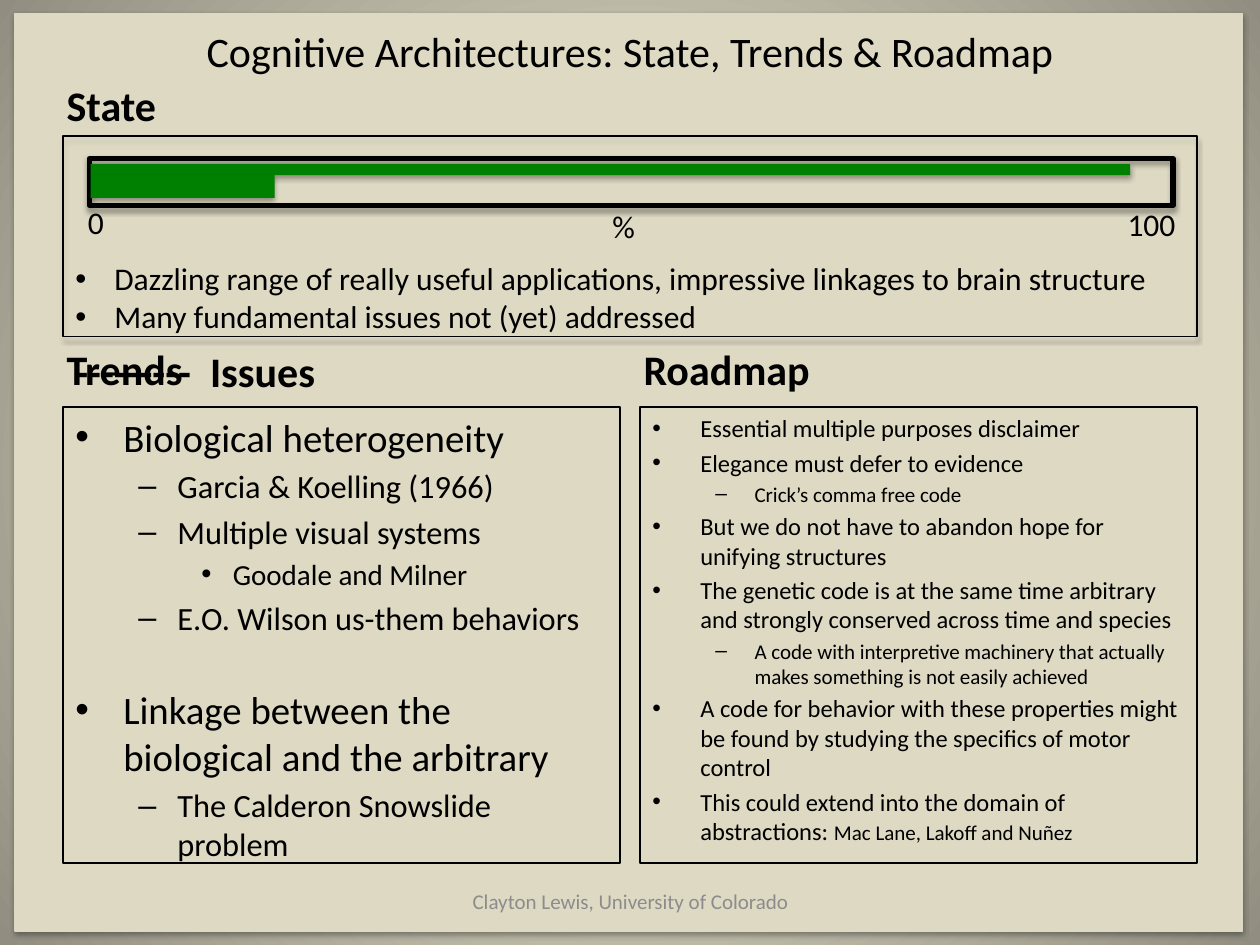
import lxml.etree
import pptx
import pptx.dml.color
import pptx.enum.dml
import pptx.enum.shapes
import pptx.enum.text
import pptx.oxml
import pptx.oxml.ns
import pptx.util

Inches = pptx.util.Inches
Pt = pptx.util.Pt
ALIGN = pptx.enum.text.PP_ALIGN
ANCHOR = pptx.enum.text.MSO_ANCHOR
BLACK, GREEN, SAND, GREY = "000000", "008000", "DDD9C3", "8C8C8C"
HEADING = {"size": Pt(24), "bold": True}
INDENTS = [(0.38, 0.38, "•"), (0.81, 0.31, "–"), (1.25, 0.25, "•")]
ISSUE_SIZES = [22.2, 18.5, 16.6]
ROADMAP_SIZES = [14, 12]
GROUP_GAP = 28

ISSUES = [
    (0, "Biological heterogeneity"),
    (1, "Garcia & Koelling (1966)"),
    (1, "Multiple visual systems"),
    (2, "Goodale and Milner"),
    (1, "E.O. Wilson us-them behaviors"),
    (0, "Linkage between the biological and the arbitrary"),
    (1, "The Calderon Snowslide problem"),
]
ROADMAP = [
    (0, "Essential multiple purposes disclaimer"),
    (0, "Elegance must defer to evidence"),
    (1, "Crick’s comma free code"),
    (0, "But we do not have to abandon hope for unifying structures"),
    (0, "The genetic code is at the same time arbitrary and strongly conserved across time and species"),
    (1, "A code with interpretive machinery that actually makes something is not easily achieved"),
    (0, "A code for behavior with these properties might be found by studying the specifics of motor control"),
    (0, "This could extend into the domain of abstractions: "),
]
STATE = [
    "Dazzling range of really useful applications, impressive linkages to brain structure",
    "Many fundamental issues not (yet) addressed",
]


def rgb(value):
    """Turn a hex string into a colour."""
    return pptx.dml.color.RGBColor.from_string(value)


def place(shape, left, top, width, height):
    """Move and size a shape in inches."""
    values = {"left": left, "top": top, "width": width, "height": height}
    for name, value in values.items():
        setattr(shape, name, Inches(value))


def style(span, color=BLACK, **values):
    """Format a run."""
    for name, value in {"name": "Calibri", "size": Pt(18), **values}.items():
        setattr(span.font, name, value)
    span.font.color.rgb = rgb(color)


def add_span(para, text, **values):
    """Add a formatted run to a paragraph."""
    span = para.add_run()
    span.text = text
    style(span, **values)


def add_box(page, left, top, width, height):
    """Add a wrapping text box."""
    box = page.shapes.add_textbox(*map(Inches, (left, top, width, height)))
    box.text_frame.word_wrap = True
    return box


def add_label(page, box, text, align=ALIGN.LEFT, **values):
    """Add one line of text in a box."""
    label = add_box(page, *box)
    para = label.text_frame.paragraphs[0]
    para.alignment = align
    add_span(para, text, **values)
    return label


def add_bar(page, box, fill=None, line=None, weight=0.75):
    """Add a shadowed rectangle."""
    bar = page.shapes.add_shape(pptx.enum.shapes.MSO_SHAPE.RECTANGLE, *map(Inches, box))
    for part, color in ((bar.fill, fill), (bar.line.fill, line)):
        if color:
            part.solid()
            part.fore_color.rgb = rgb(color)
        else:
            part.background()
    if line:
        bar.line.width = Pt(weight)
    bar.shadow.inherit = False
    effects = bar.element.spPr.find(pptx.oxml.ns.qn("a:effectLst"))
    effects.append(pptx.oxml.parse_xml(
        f'<a:outerShdw {pptx.oxml.ns.nsdecls("a")} blurRad="{Pt(3.1)}" dist="{Pt(1.8)}" '
        'dir="5400000" rotWithShape="0"><a:srgbClr val="000000">'
        '<a:alpha val="35000"/></a:srgbClr></a:outerShdw>'))
    return bar


def set_bullet(para, margin, hang, mark):
    """Give a paragraph a hanging bullet."""
    properties = para._p.get_or_add_pPr()
    properties.set("marL", str(Inches(margin)))
    properties.set("indent", str(-Inches(hang)))
    for tag, name, value in (("a:buFont", "typeface", "Arial"), ("a:buChar", "char", mark)):
        bullet = lxml.etree.SubElement(properties, pptx.oxml.ns.qn(tag))
        bullet.set(name, value)


def add_paragraph(frame, index):
    """Return the first paragraph or add another."""
    return frame.add_paragraph() if index else frame.paragraphs[0]


def build_background(page):
    """Fill the page with a radial gradient and a sand panel behind the title."""
    fill = page.background.fill
    fill.gradient()
    for stop, color, position in zip(fill.gradient_stops, ("FCF7DD", "918E81"), (0, 1)):
        stop.color.rgb = rgb(color)
        stop.position = position
    linear = next(page.element.iter(pptx.oxml.ns.qn("a:lin")))
    linear.getparent().replace(linear, pptx.oxml.parse_xml(
        f'<a:path {pptx.oxml.ns.nsdecls("a")} path="circle">'
        '<a:fillToRect l="50000" t="50000" r="50000" b="50000"/></a:path>'))
    panel = add_bar(page, (0.12, 0.11, 9.74, 7.28), SAND, SAND)
    page.shapes.title.element.addprevious(panel.element)


def build_title(page, box):
    """Place and format the title."""
    title = page.shapes.title
    place(title, *box)
    frame = title.text_frame
    values = {"auto_size": pptx.enum.text.MSO_AUTO_SIZE.NONE,
              "vertical_anchor": ANCHOR.TOP, "word_wrap": True}
    for name, value in values.items():
        setattr(frame, name, value)
    frame.paragraphs[0].alignment = ALIGN.CENTER
    add_span(frame.paragraphs[0], "Cognitive Architectures: State, Trends & Roadmap", size=Pt(24))


def build_state(page, box):
    """Build the heading, progress scale and findings."""
    left, top, width, height = box
    add_label(page, (left - 0.07, top - 0.5, 4.42, 0.5), "State", **HEADING)
    add_bar(page, box, line=BLACK)
    add_bar(page, (left + 0.21, top + 0.18, 8.6, 0.37), line=BLACK, weight=3)
    add_bar(page, (left + 0.22, top + 0.22, 8.25, 0.09), GREEN)
    add_bar(page, (left + 0.22, top + 0.31, 1.46, 0.18), GREEN)
    add_label(page, (left + 0.1, top + 0.48, 0.56, 0.4), "0")
    add_label(page, (left + 4.17, top + 0.51, 0.56, 0.4), "%", ALIGN.CENTER)
    add_label(page, (left + 8.35, top + 0.5, 0.72, 0.4), "100")
    frame = add_box(page, left, top + 0.93, width, 0.71).text_frame
    for index, text in enumerate(STATE):
        para = add_paragraph(frame, index)
        set_bullet(para, 0.31, 0.31, "•")
        add_span(para, text)


def build_column(page, box, heading, items, sizes, gaps=()):
    """Build a headed outline, with wider gaps before the given items."""
    left, top, width, height = box
    add_label(page, (left - 0.07, top - 0.55, width, 0.5), heading, **HEADING)
    outline = add_box(page, *box)
    outline.line.color.rgb = rgb(BLACK)
    outline.line.width = Pt(0.75)
    frame = outline.text_frame
    for index, (level, text) in enumerate(items):
        para = add_paragraph(frame, index)
        para.level = level
        para.space_before = Pt(GROUP_GAP if index in gaps else 0.2 * sizes[level])
        set_bullet(para, *INDENTS[level])
        add_span(para, text, size=Pt(sizes[level]))
    return frame


def build_footer(page, box):
    """Add the author line."""
    footer = add_label(page, box, "Clayton Lewis, University of Colorado", ALIGN.CENTER,
                       color=GREY, size=Pt(12))
    footer.text_frame.vertical_anchor = ANCHOR.MIDDLE


def main():
    """Build and save the deck."""
    deck = pptx.Presentation()
    deck.slide_width, deck.slide_height = Inches(10), Inches(7.5)
    page = deck.slides.add_slide(deck.slide_layouts[5])
    build_background(page)
    build_title(page, (0.5, 0.15, 9, 0.34))
    build_state(page, (0.5, 1.08, 9, 1.59))
    build_column(page, (0.5, 3.23, 4.42, 3.62), "Trends", ISSUES, ISSUE_SIZES, gaps=(5,))
    add_label(page, (0.5, 2.69, 2.76, 0.5), "---------  Issues", **HEADING)
    roadmap = build_column(page, (5.08, 3.23, 4.42, 3.62), "Roadmap", ROADMAP, ROADMAP_SIZES)
    add_span(roadmap.paragraphs[-1], "Mac Lane, Lakoff and Nuñez", size=Pt(12))
    build_footer(page, (3.42, 6.95, 3.17, 0.4))
    deck.save("out.pptx")


if __name__ == "__main__":
    main()
